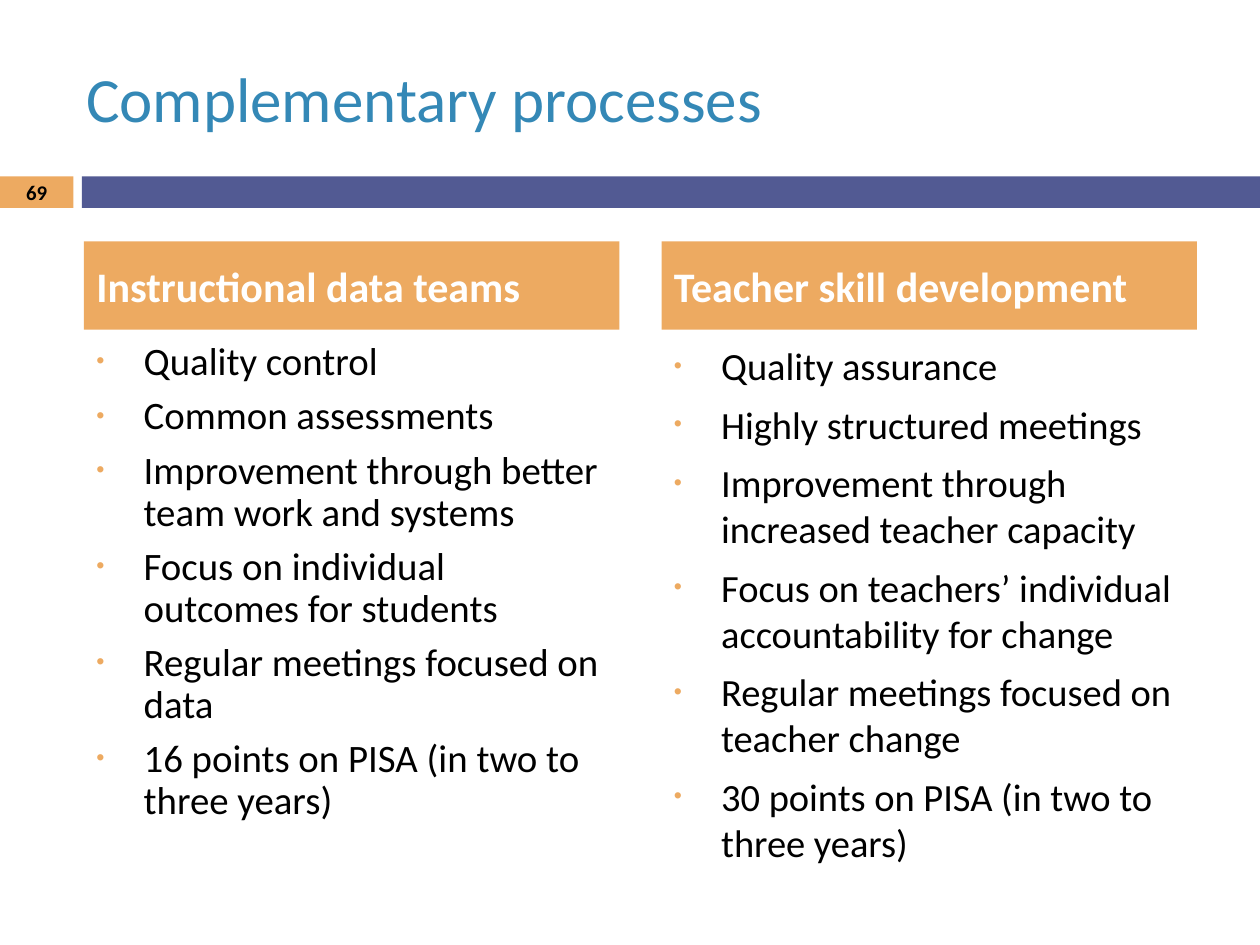
from pptx import Presentation
from pptx.dml.color import RGBColor
from pptx.enum.shapes import MSO_SHAPE as Shape
from pptx.enum.text import MSO_ANCHOR as Anchor, MSO_AUTO_SIZE as AutoSize, PP_ALIGN as Align
from pptx.oxml.ns import qn
from pptx.util import Pt
from lxml.etree import SubElement

FONT = "Calibri"
ORANGE = RGBColor(0xED, 0xAA, 0x61)
INDIGO = RGBColor(0x52, 0x5A, 0x93)
BLUE = RGBColor(0x34, 0x88, 0xB6)
BLACK = RGBColor(0, 0, 0)
WHITE = RGBColor(0xFF, 0xFF, 0xFF)

HANGING = Pt(27)
HEADING_HEIGHT = 50.4
LIST_OFFSET = 54

COLUMNS = [
    ("Instructional data teams", [
        "Quality control",
        "Common assessments",
        "Improvement through better team work and systems",
        "Focus on individual outcomes for students",
        "Regular meetings focused on data",
        "16 points on PISA (in two to three years)",
    ], {"size": 22.2, "line_spacing": 0.9}),
    ("Teacher skill development", [
        "Quality assurance",
        "Highly structured meetings",
        "Improvement through increased teacher capacity",
        "Focus on teachers’ individual accountability for change",
        "Regular meetings focused on teacher change",
        "30 points on PISA (in two to three years)",
    ], {"size": 22}),
]


def add_bullet(paragraph):
    properties = paragraph._p.get_or_add_pPr()
    properties.set("marL", str(HANGING))
    properties.set("indent", str(-HANGING))
    color = SubElement(properties, qn("a:buClr"))
    SubElement(color, qn("a:srgbClr"), val=str(ORANGE))
    SubElement(properties, qn("a:buSzPct"), val="60000")
    SubElement(properties, qn("a:buFont"), typeface="Arial")
    SubElement(properties, qn("a:buChar"), char="•")


def write(frame, *lines, size, color, bold=False, align=Align.LEFT, anchor=Anchor.TOP,
          space_before=0, line_spacing=1.0, bullets=False):
    frame.word_wrap = True
    frame.auto_size = AutoSize.NONE
    frame.vertical_anchor = anchor
    for index, line in enumerate(lines):
        paragraph = frame.add_paragraph() if index else frame.paragraphs[0]
        paragraph.alignment = align
        paragraph.line_spacing = line_spacing
        paragraph.space_before = Pt(space_before)
        if bullets:
            add_bullet(paragraph)
        run = paragraph.add_run()
        run.text = line
        run.font.name = FONT
        run.font.size = Pt(size)
        run.font.bold = bold
        run.font.color.rgb = color


def add_block(slide, left, top, width, height, fill):
    block = slide.shapes.add_shape(Shape.RECTANGLE, Pt(left), Pt(top), Pt(width), Pt(height))
    block.shadow.inherit = False
    block.fill.solid()
    block.fill.fore_color.rgb = fill
    block.line.fill.background()
    return block


def place_title(slide, left, top, width, height):
    title = slide.shapes.title
    title.left, title.top, title.width, title.height = map(Pt, (left, top, width, height))
    write(title.text_frame, "Complementary processes", size=36, color=BLUE, anchor=Anchor.MIDDLE)


def add_band(slide, left, top, width, height):
    number_width, gap = 42, 4.8
    page_number = add_block(slide, left, top, number_width, height, ORANGE)
    frame = page_number.text_frame
    frame.margin_top = frame.margin_bottom = 0
    write(frame, "69", size=11.9, color=BLACK, bold=True,
          align=Align.CENTER, anchor=Anchor.MIDDLE)
    bar_offset = number_width + gap
    add_block(slide, left + bar_offset, top, width - bar_offset, height, INDIGO)


def add_column(slide, left, top, width, height, heading, points, list_format):
    # Heading
    header = add_block(slide, left, top, width, HEADING_HEIGHT, ORANGE)
    write(header.text_frame, heading, size=24, color=WHITE, bold=True,
          anchor=Anchor.MIDDLE, space_before=7)
    # Bulleted list
    body = slide.shapes.add_textbox(Pt(left), Pt(top + LIST_OFFSET),
                                    Pt(width), Pt(height - LIST_OFFSET))
    write(body.text_frame, *points, color=BLACK, space_before=7, bullets=True, **list_format)


def main():
    presentation = Presentation()
    presentation.slide_width, presentation.slide_height = Pt(720), Pt(540)
    slide = presentation.slides.add_slide(presentation.slide_layouts[5])

    place_title(slide, 42, 21.6, 642, 68.4)
    add_band(slide, 0, 100.8, 720, 18)

    # Two equal columns
    left, width, gap = 48, 306, 24
    for index, column in enumerate(COLUMNS):
        add_column(slide, left + index * (width + gap), 138, width, 336, *column)

    presentation.save("out.pptx")


if __name__ == "__main__":
    main()
